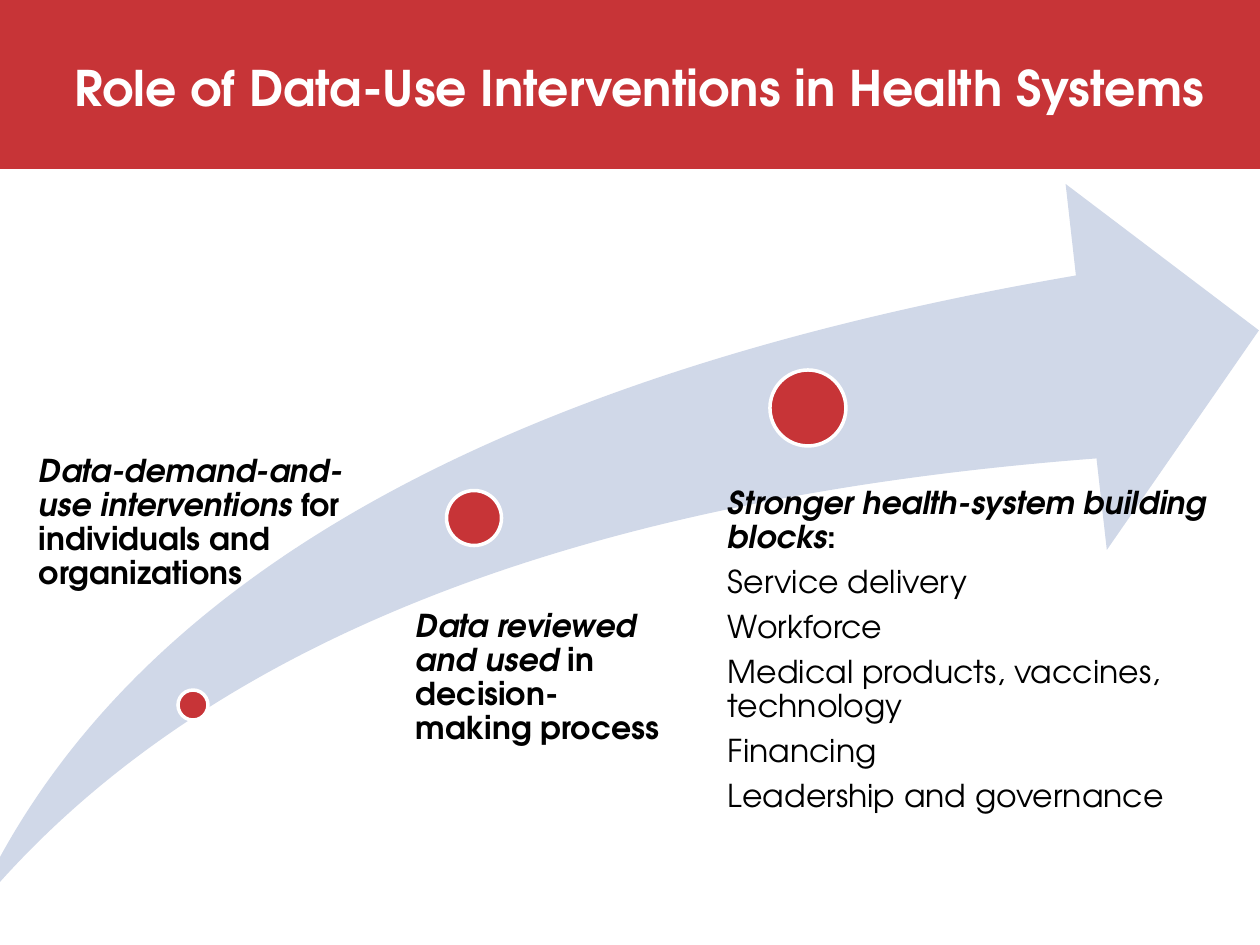
import pptx
import pptx.util
import pptx.dml.color
import pptx.enum.shapes
import pptx.enum.text

RED = pptx.dml.color.RGBColor(0xC7, 0x34, 0x37)
PALE_BLUE = pptx.dml.color.RGBColor(0xD0, 0xD8, 0xE8)
WHITE = pptx.dml.color.RGBColor(0xFF, 0xFF, 0xFF)
BLACK = pptx.dml.color.RGBColor(0, 0, 0)
FONT = "TeX Gyre Adventor"
SCALE = 914400 / 126
SHAPES = pptx.enum.shapes.MSO_SHAPE

presentation = pptx.Presentation()
presentation.slide_width = round(1260 * SCALE)
presentation.slide_height = round(945 * SCALE)
slide = presentation.slides.add_slide(presentation.slide_layouts[6])


def add_filled_shape(kind, box, color):
    shape = slide.shapes.add_shape(kind, *[round(length * SCALE) for length in box])
    shape.shadow.inherit = False
    shape.fill.solid()
    shape.fill.fore_color.rgb = color
    shape.line.fill.background()
    return shape


def add_text(box, inset, paragraphs, size, color, line_spacing, space_after):
    """Each paragraph is a list of (text, bold, italic) runs."""
    shape = slide.shapes.add_textbox(*[round(length * SCALE) for length in box])
    frame = shape.text_frame
    frame.word_wrap = True
    frame.vertical_anchor = pptx.enum.text.MSO_ANCHOR.TOP
    frame.margin_left = round(inset * SCALE)
    frame.margin_top = frame.margin_right = frame.margin_bottom = 0
    for index, runs in enumerate(paragraphs):
        paragraph = frame.add_paragraph() if index else frame.paragraphs[0]
        paragraph.line_spacing = line_spacing
        paragraph.space_after = pptx.util.Pt(space_after)
        for text, bold, italic in runs:
            run = paragraph.add_run()
            run.text = text
            run.font.name = FONT
            run.font.size = pptx.util.Pt(size)
            run.font.bold = bold
            run.font.italic = italic
            run.font.color.rgb = color


# Title band
add_filled_shape(SHAPES.RECTANGLE, (0, 0, 1260, 169), RED)
title = "Role of Data-Use Interventions in Health Systems"
add_text((74, 58, 1163, 59), 0, [[(title, True, False)]], 28, WHITE, 1.0, 0)

# Rising arrow
arrow = add_filled_shape(SHAPES.SWOOSH_ARROW, (-29, 184, 1288, 732), PALE_BLUE)
arrow.adjustments[0] = 0.25
arrow.adjustments[1] = 0.25

# Milestones: dot center and diameter, text box, inset, paragraphs
building_blocks = [
    "Service delivery",
    "Workforce",
    "Medical products, vaccines, technology",
    "Financing",
    "Leadership and governance",
]
milestones = [
    ((193, 705), 30, (23, 455, 339, 324), 16, [
        [("Data-demand-and- use interventions ", True, True),
         ("for individuals and organizations", True, False)],
    ]),
    ((474, 518), 55, (387, 610, 281, 173), 29, [
        [("Data reviewed and used ", True, True),
         ("in decision-making process", True, False)],
    ]),
    ((808, 408), 76, (688, 487, 522, 443), 40, [
        [("Stronger health-system building blocks", True, True),
         (":", True, False)],
        *[[(block, False, False)] for block in building_blocks],
    ]),
]
for (x, y), diameter, text_box, inset, paragraphs in milestones:
    dot_box = (x - diameter / 2, y - diameter / 2, diameter, diameter)
    dot = add_filled_shape(SHAPES.OVAL, dot_box, RED)
    dot.line.color.rgb = WHITE
    dot.line.width = pptx.util.Pt(2)
    add_text(text_box, inset, paragraphs, 18, BLACK, 0.9, 6.3)

presentation.save("out.pptx")
